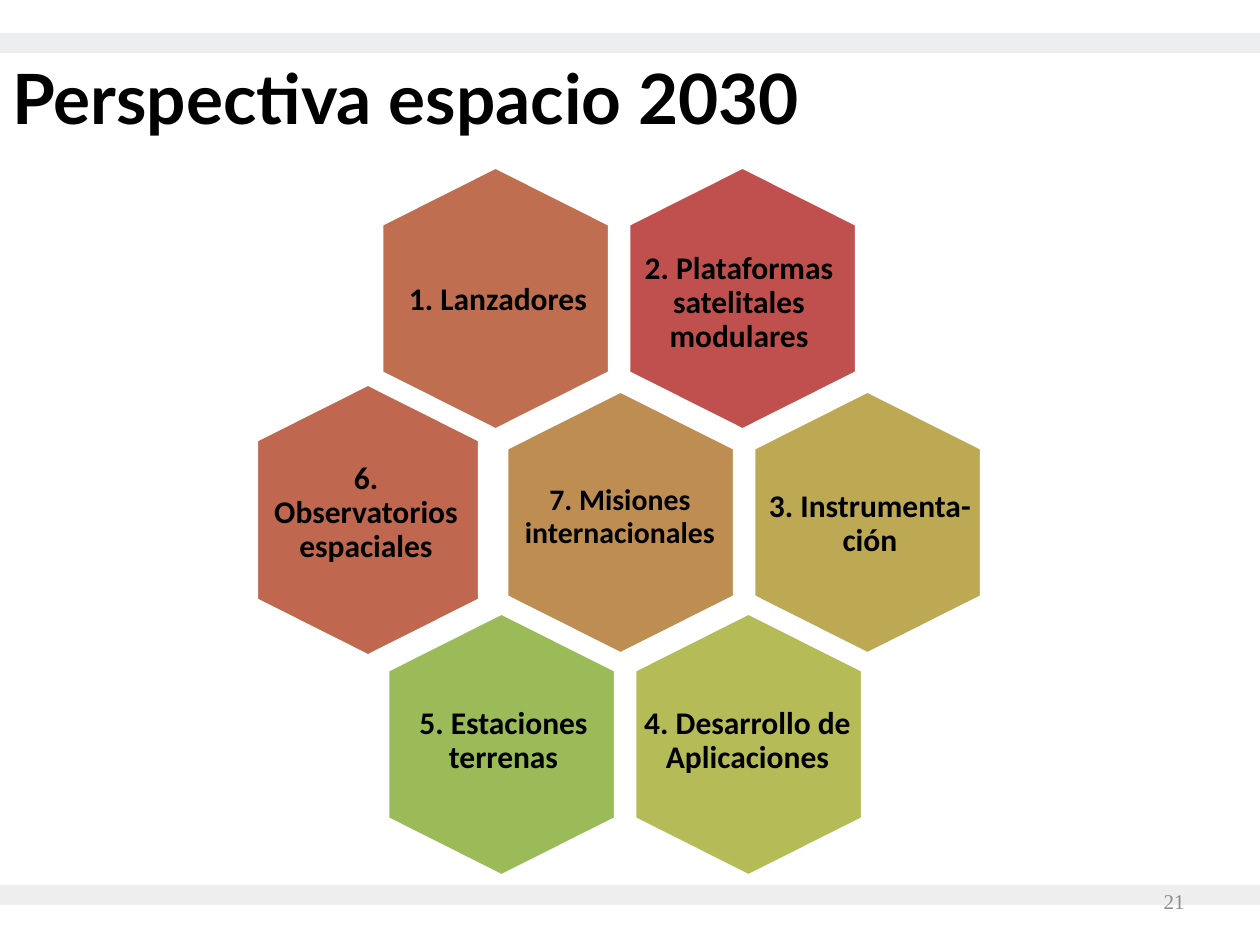
import pptx
import pptx.util
import pptx.dml.color
import pptx.enum.shapes
import pptx.enum.text

SCALE = 914400 / 126
HUES = {
    "bar": "EDEEF0", "white": "FFFFFF", "black": "000000", "gray": "8C8C8C",
    "rust": "BF6F4F", "red": "C0504D", "gold": "BDA954", "lime": "B5BC57",
    "green": "9BBB59", "brick": "BF674F", "tan": "BE8D52",
}
KINDS = pptx.enum.shapes.MSO_SHAPE
ALIGN = pptx.enum.text.PP_ALIGN
ANCHOR = pptx.enum.text.MSO_ANCHOR
FIT = pptx.enum.text.MSO_AUTO_SIZE
STEP = 247
TOP, MID, LOW = 184, 408, 630
CELL = (263, 229)
HEXES = [
    (364 + STEP, TOP, CELL, "red"),
    (364, TOP, CELL, "rust"),
    (489, MID, CELL, "tan"),
    (489 + STEP, MID, CELL, "gold"),
    (370 + STEP, LOW, CELL, "lime"),
    (370, LOW, CELL, "green"),
    (232, MID, (272, 224), "brick"),
]
HEAD = {"name": "Lato", "size": pptx.util.Pt(39.6), "bold": True}
LABEL = {"name": "Calibri", "size": pptx.util.Pt(18), "bold": True}
SMALL = {**LABEL, "size": pptx.util.Pt(17)}
NUMBER = {"name": "Times New Roman", "size": pptx.util.Pt(12)}
FREE = {"vertical_anchor": ANCHOR.TOP, "auto_size": FIT.SHAPE_TO_FIT_TEXT}
INSET = {
    "margin_left": pptx.util.Inches(0.05),
    "margin_right": pptx.util.Inches(0.05),
}
CENTER = {"alignment": ALIGN.CENTER, "line_spacing": 0.9}
NOTES = [
    ("1. Lanzadores", (396, 277, 204, 47), LABEL, {**FREE, "word_wrap": False}),
    ("2. Plataformas satelitales modulares", (630, 246, 218, 116), LABEL, FREE),
    ("3. Instrumenta-ción", (751, 442, 238, 165), LABEL, INSET),
    ("4. Desarrollo de Aplicaciones", (636, 659, 223, 165), LABEL, INSET),
    ("5. Estaciones terrenas", (407, 659, 193, 165), LABEL, INSET),
    ("6. Observatorios espaciales", (257, 431, 218, 165), LABEL, INSET),
    ("7. Misiones internacionales", (518, 435, 204, 165), SMALL, INSET),
]


def px(num):
    return pptx.util.Emu(round(num * SCALE))


def tint(key):
    return pptx.dml.color.RGBColor.from_string(HUES[key])


def apply(item, look):
    for key, val in look.items():
        setattr(item, key, val)


def add_form(slide, kind, box, hue):
    form = slide.shapes.add_shape(kind, *map(px, box))
    form.shadow.inherit = False
    form.fill.solid()
    form.fill.fore_color.rgb = tint(hue)
    form.line.fill.background()
    return form


def add_hex(slide, left, top, size, hue):
    form = add_form(slide, KINDS.HEXAGON, (left, top, *size), hue)
    form.rotation = 90
    form.adjustments[0] = 0.25
    form.adjustments[1] = 1.15
    form.line.color.rgb = tint("white")
    form.line.width = pptx.util.Pt(2)


def add_text(slide, text, box, font, frame, para, hue="black"):
    body = slide.shapes.add_textbox(*map(px, box)).text_frame
    apply(body, {"word_wrap": True, "vertical_anchor": ANCHOR.MIDDLE, **frame})
    line = body.paragraphs[0]
    apply(line, para)
    run = line.add_run()
    run.text = text
    apply(run.font, font)
    run.font.color.rgb = tint(hue)


def main():
    deck = pptx.Presentation()
    apply(deck, {"slide_width": px(1260), "slide_height": px(945)})
    slide = deck.slides.add_slide(deck.slide_layouts[6])
    for top in (885, 33):
        add_form(slide, KINDS.RECTANGLE, (0, top, 1260, 20), "bar")
    add_text(slide, "21", (903, 876, 294, 50), NUMBER, {},
             {"alignment": ALIGN.RIGHT}, "gray")
    add_text(slide, "Perspectiva espacio 2030", (0, 18, 1134, 158), HEAD, {},
             {"alignment": ALIGN.LEFT})
    for cell in HEXES:
        add_hex(slide, *cell)
    for note in NOTES:
        add_text(slide, *note, CENTER)
    deck.save("out.pptx")


if __name__ == "__main__":
    main()
